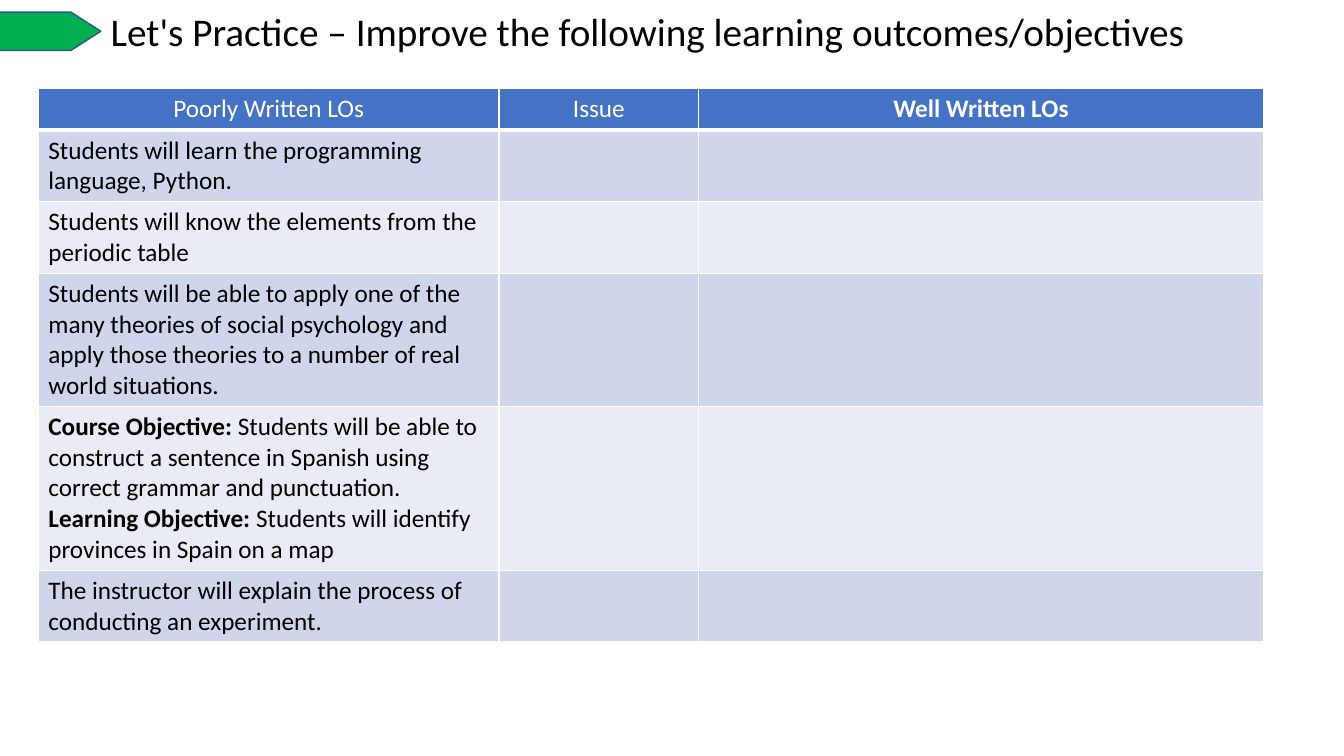
from dataclasses import dataclass

from lxml.etree import SubElement
from pptx import Presentation
from pptx.dml.color import RGBColor
from pptx.enum.shapes import MSO_SHAPE
from pptx.enum.text import MSO_AUTO_SIZE, PP_ALIGN
from pptx.oxml.ns import qn
from pptx.util import Inches, Pt

WHITE = RGBColor(0xFF, 0xFF, 0xFF)
BLACK = RGBColor(0x00, 0x00, 0x00)
HEADER_BLUE = RGBColor(0x44, 0x72, 0xC4)
BAND_DARK = RGBColor(0xCF, 0xD5, 0xEA)
BAND_LIGHT = RGBColor(0xE9, 0xEB, 0xF5)
ARROW_GREEN = RGBColor(0x00, 0xB0, 0x50)
ARROW_EDGE = RGBColor(0x32, 0x54, 0x91)

COLUMN_WIDTHS = (4.57, 1.98, 5.6)
ROW_HEIGHT = 0.41
TABLE_HEIGHT = 5.41


@dataclass(frozen=True)
class Span:
    text: str
    bold: bool = False


HEADERS = (Span("Poorly Written LOs"), Span("Issue"), Span("Well Written LOs", True))

# Each outcome is a list of paragraphs, each paragraph a list of spans
OUTCOMES = (
    [[Span("Students will learn the programming language, Python.")]],
    [[Span("Students will know the elements from the periodic table")]],
    [[Span("Students will be able to apply one of the many theories of social "
           "psychology and apply those theories to a number of real world situations.")]],
    [
        [Span("Course Objective:", True),
         Span(" Students will be able to construct a sentence in Spanish using "
              "correct grammar and punctuation.")],
        [Span("Learning Objective:", True),
         Span(" Students will identify provinces in Spain on a map")],
    ],
    [[Span("The instructor will explain the process of conducting an experiment.")]],
)


def add_span(p, span: Span, size: int, color: RGBColor) -> None:
    r = p.add_run()
    r.text = span.text
    font_format = {"name": "Calibri", "size": Pt(size), "bold": span.bold}
    for name, value in font_format.items():
        setattr(r.font, name, value)
    r.font.color.rgb = color


def fill_text(tf, paragraphs: list, size: int, color: RGBColor, align=None) -> None:
    for i, spans in enumerate(paragraphs):
        p = tf.add_paragraph() if i else tf.paragraphs[0]
        p.alignment = align
        for span in spans:
            add_span(p, span, size, color)


def style_cell(cell, fill: RGBColor, top: int, bottom: int) -> None:
    tc_pr = cell._tc.get_or_add_tcPr()
    for side, width in {"L": 1, "R": 1, "T": top, "B": bottom}.items():
        ln = SubElement(tc_pr, qn(f"a:ln{side}"), w=str(Pt(width)))
        solid = SubElement(ln, qn("a:solidFill"))
        SubElement(solid, qn("a:srgbClr"), val=str(WHITE))
    cell.fill.solid()
    cell.fill.fore_color.rgb = fill


def add_outcome_table(s) -> None:
    rows = len(OUTCOMES) + 1
    frame = s.shapes.add_table(rows, len(COLUMN_WIDTHS), Inches(0.38), Inches(0.88),
                               Inches(sum(COLUMN_WIDTHS)), Inches(TABLE_HEIGHT))
    table = frame.table
    for column, width in zip(table.columns, COLUMN_WIDTHS):
        column.width = Inches(width)
    for i, row in enumerate(table.rows):
        row.height = Inches(ROW_HEIGHT)
        fill = HEADER_BLUE if i == 0 else BAND_DARK if i % 2 else BAND_LIGHT
        for cell in row.cells:
            style_cell(cell, fill, top=3 if i == 1 else 1, bottom=3 if i == 0 else 1)
    frame.height = Inches(TABLE_HEIGHT)

    for j, header in enumerate(HEADERS):
        fill_text(table.cell(0, j).text_frame, [[header]], 18, WHITE, PP_ALIGN.CENTER)
    for i, outcome in enumerate(OUTCOMES, start=1):
        fill_text(table.cell(i, 0).text_frame, outcome, 18, BLACK)


def add_title_arrow(s) -> None:
    sp = s.shapes.add_shape(MSO_SHAPE.FLOWCHART_OFFPAGE_CONNECTOR, Inches(0.07),
                            Inches(-0.43), Inches(0.38), Inches(1.48))
    sp.rotation = 270
    sp.shadow.inherit = False
    sp.fill.solid()
    sp.fill.fore_color.rgb = ARROW_GREEN
    sp.line.color.rgb = ARROW_EDGE
    sp.line.width = Pt(1)


def add_title(s) -> None:
    sp = s.shapes.add_textbox(Inches(1), Inches(0.02), Inches(11.64), Inches(0.57))
    tf = sp.text_frame
    for name, value in {"word_wrap": True, "auto_size": MSO_AUTO_SIZE.SHAPE_TO_FIT_TEXT}.items():
        setattr(tf, name, value)
    title = Span("Let's Practice – Improve the following learning outcomes/objectives")
    fill_text(tf, [[title]], 28, BLACK)


def main() -> None:
    prs = Presentation()
    prs.slide_width, prs.slide_height = Inches(13.33), Inches(7.5)
    s = prs.slides.add_slide(prs.slide_layouts[6])
    add_outcome_table(s)
    add_title_arrow(s)
    add_title(s)
    prs.save("out.pptx")


if __name__ == "__main__":
    main()
